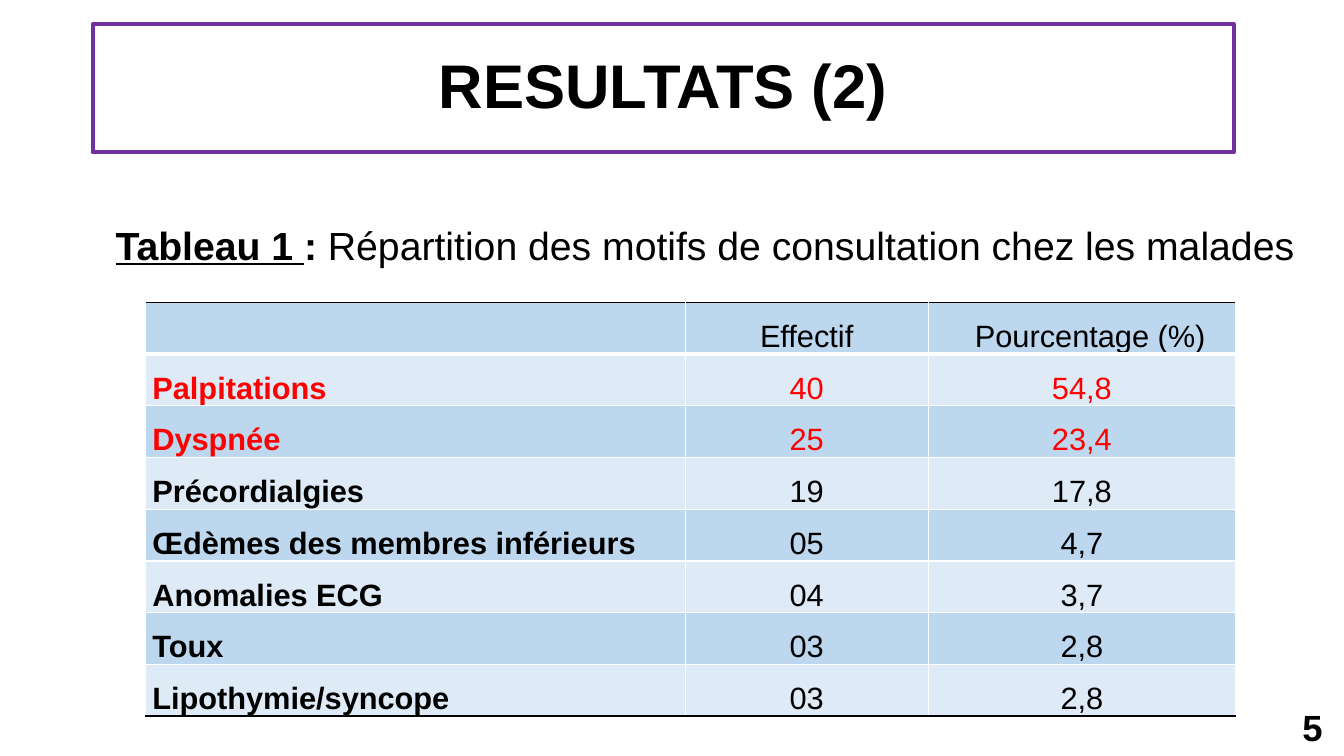
from dataclasses import dataclass

from lxml import etree
from pptx import Presentation
from pptx.dml.color import RGBColor
from pptx.enum.text import MSO_ANCHOR, MSO_AUTO_SIZE, PP_ALIGN
from pptx.oxml.ns import qn
from pptx.util import Cm, Pt

LEFT, CENTER, RIGHT = PP_ALIGN.LEFT, PP_ALIGN.CENTER, PP_ALIGN.RIGHT
TOP, MIDDLE = MSO_ANCHOR.TOP, MSO_ANCHOR.MIDDLE
NO_FIT = MSO_AUTO_SIZE.NONE

BLACK, WHITE, RED, PURPLE = "000000", "FFFFFF", "FF0000", "7030A0"
BANDS = ("BDD7EE", "DEEBF7")
TITLE_LAYOUT = 5
COL_WIDTHS = (13.61, 6.12, 7.75)
ROW_HEIGHT = 1.19
HEADER_INDENT = 0.6  # left margin of the last heading


@dataclass
class Box:
    left: float
    top: float
    width: float
    height: float

    def lengths(self) -> tuple:
        return Cm(self.left), Cm(self.top), Cm(self.width), Cm(self.height)


@dataclass
class Row:
    label: str
    count: str
    percent: str
    color: str = BLACK


TITLE_BOX = Box(2.34, 0.61, 28.75, 3.23)
CAPTION_BOX = Box(2.34, 5.44, 30.84, 2.24)
TABLE_BOX = Box(3.66, 7.62, sum(COL_WIDTHS), 8 * ROW_HEIGHT)
PAGE_BOX = Box(25.81, 17.78, 7.77, 1.09)

ROWS = [
    Row("", "Effectif", "Pourcentage (%)"),
    Row("Palpitations", "40", "54,8", RED),
    Row("Dyspnée", "25", "23,4", RED),
    Row("Précordialgies", "19", "17,8"),
    Row("Œdèmes des membres inférieurs", "05", "4,7"),
    Row("Anomalies ECG", "04", "3,7"),
    Row("Toux", "03", "2,8"),
    Row("Lipothymie/syncope", "03", "2,8"),
]


def rgb(color: str) -> RGBColor:
    return RGBColor.from_string(color)


def add_run(p, text: str, size: float, color: str = BLACK, **extra) -> None:
    r = p.add_run()
    r.text = text
    font = {"name": "Arial", "size": Pt(size), "bold": False, **extra}
    for name, value in font.items():
        setattr(r.font, name, value)
    r.font.color.rgb = rgb(color)


def format_frame(tf, anchor, align):
    frame = {"word_wrap": True, "auto_size": NO_FIT, "vertical_anchor": anchor}
    for name, value in frame.items():
        setattr(tf, name, value)
    p = tf.paragraphs[0]
    p.alignment = align
    return p


def add_text(slide, box: Box, anchor, align):
    sp = slide.shapes.add_textbox(*box.lengths())
    return format_frame(sp.text_frame, anchor, align)


def set_border(cell, side: str, color: str, width: float) -> None:
    tc_pr = cell._tc.get_or_add_tcPr()
    ln = etree.SubElement(tc_pr, qn(f"a:ln{side}"), w=str(Pt(width)))
    fill = etree.SubElement(ln, qn("a:solidFill"))
    etree.SubElement(fill, qn("a:srgbClr"), val=color)


def fill_cell(cell, text: str, column: int, color: str, band: str) -> None:
    margins = {"margin_left": Cm(0.18), "margin_right": Cm(0.18),
               "margin_top": 0, "margin_bottom": 0}
    for name, value in margins.items():
        setattr(cell, name, value)
    cell.fill.solid()
    cell.fill.fore_color.rgb = rgb(band)
    if text:
        p = cell.text_frame.paragraphs[0]
        p.alignment = CENTER if column else LEFT
        p.line_spacing = 1.5
        add_run(p, text, 22, color, bold=column == 0)


def add_results(slide) -> None:
    table = slide.shapes.add_table(
        len(ROWS), len(COL_WIDTHS), *TABLE_BOX.lengths()).table
    table.first_row = table.horz_banding = False
    for column, width in zip(table.columns, COL_WIDTHS):
        column.width = Cm(width)
    last = len(ROWS) - 1
    for i, row in enumerate(ROWS):
        table.rows[i].height = Cm(ROW_HEIGHT)
        borders = {
            "L": (WHITE, 1),
            "R": (WHITE, 1),
            "T": (BLACK if i == 0 else WHITE, 3 if i == 1 else 1),
            "B": (BLACK if i == last else WHITE, 3 if i == 0 else 1),
        }
        for j, text in enumerate((row.label, row.count, row.percent)):
            cell = table.cell(i, j)
            for side, (color, width) in borders.items():
                set_border(cell, side, color, width)
            fill_cell(cell, text, j, row.color, BANDS[i % 2])
    table.cell(0, 2).margin_left = Cm(HEADER_INDENT)


def main() -> None:
    prs = Presentation()
    prs.slide_width, prs.slide_height = Cm(33.87), Cm(19.05)
    slide = prs.slides.add_slide(prs.slide_layouts[TITLE_LAYOUT])

    # Framed title
    title = slide.shapes.title
    title.left, title.top, title.width, title.height = TITLE_BOX.lengths()
    title.line.color.rgb = rgb(PURPLE)
    title.line.width = Pt(3)
    p = format_frame(title.text_frame, MIDDLE, CENTER)
    p.line_spacing = 0.9
    add_run(p, "RESULTATS (2)", 44, bold=True)

    # Page number
    p = add_text(slide, PAGE_BOX, MIDDLE, RIGHT)
    add_run(p, "5", 26, bold=True)

    # Table and its caption
    add_results(slide)
    p = add_text(slide, CAPTION_BOX, TOP, CENTER)
    add_run(p, "Tableau 1 ", 28, bold=True, underline=True)
    add_run(p, ": ", 28, bold=True)
    add_run(p, "Répartition des motifs de consultation chez les malades", 28)

    prs.save("out.pptx")


if __name__ == "__main__":
    main()
